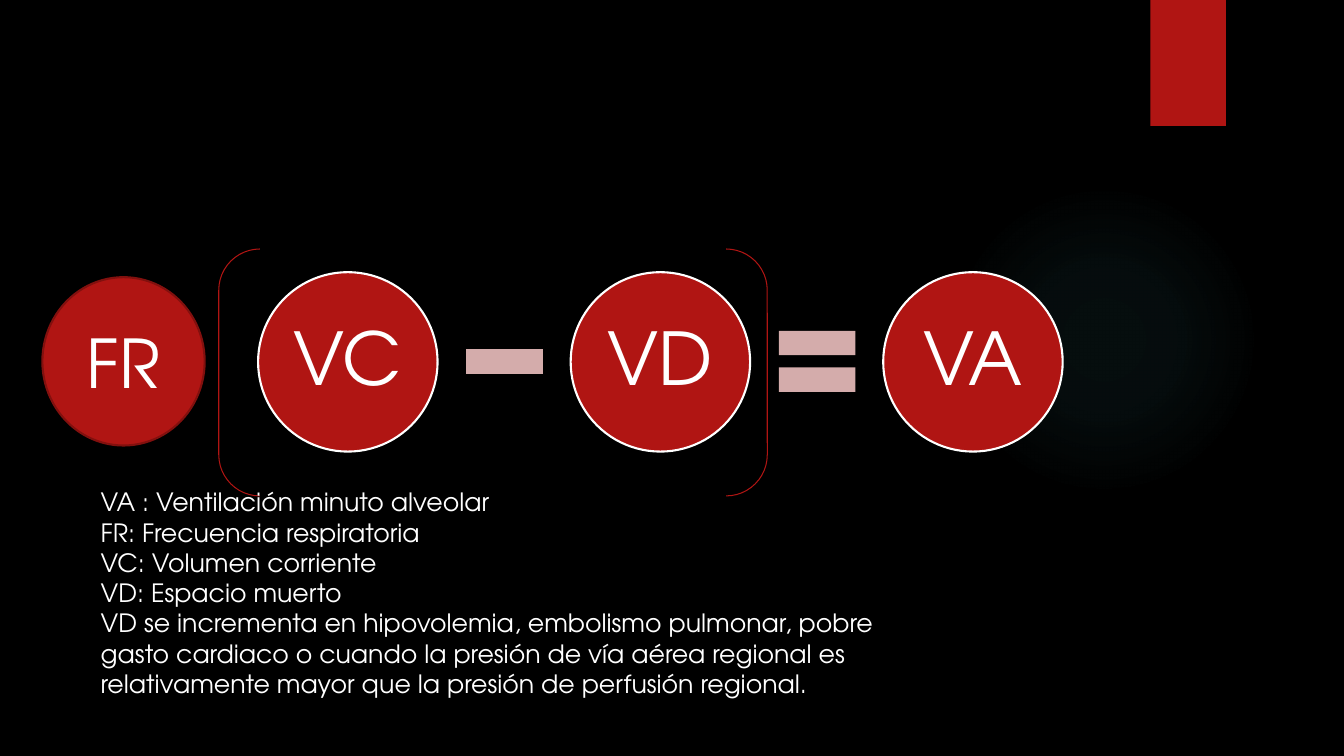
"""Build the alveolar ventilation equation slide."""
from dataclasses import dataclass
from typing import Optional

from lxml import etree
from pptx import Presentation
from pptx import util as u
from pptx.dml.color import RGBColor
from pptx.enum import shapes, text
from pptx.oxml import ns

Kind = shapes.MSO_SHAPE


@dataclass(frozen=True)
class Theme:
    font: str = "TeX Gyre Adventor"
    background: str = "000000"
    white: str = "FFFFFF"
    red: str = "B01513"
    dark_red: str = "82100E"
    pink: str = "D4ACAB"
    glow: str = "50B9C1"
    term_size: int = 52
    rate_size: int = 48
    body_size: int = 18
    outline: float = 1.5
    thin: float = 0.75


THEME = Theme()


@dataclass(frozen=True)
class Figure:
    kind: Kind
    left: float
    top: float
    width: float
    height: float
    fill: Optional[str] = None
    line: Optional[str] = None
    line_width: float = THEME.outline
    label: str = ""
    size: int = THEME.term_size
    spacing: float = 1.0
    inset: float = 0.1


def add_span(para, words: str, size: int) -> None:
    span = para.add_run()
    span.text = words
    span.font.name = THEME.font
    span.font.size = u.Pt(size)
    span.font.color.rgb = RGBColor.from_string(THEME.white)


def draw_label(shape, figure: Figure) -> None:
    frame = shape.text_frame
    frame.word_wrap = True
    frame.vertical_anchor = text.MSO_ANCHOR.MIDDLE
    frame.margin_left = frame.margin_right = u.Inches(figure.inset)
    frame.margin_top = frame.margin_bottom = u.Inches(min(figure.inset, 0.07))
    para = frame.paragraphs[0]
    para.alignment = text.PP_ALIGN.CENTER
    para.line_spacing = figure.spacing
    add_span(para, figure.label, figure.size)


def draw_figure(page, figure: Figure):
    box = (figure.left, figure.top, figure.width, figure.height)
    shape = page.shapes.add_shape(figure.kind, *map(u.Inches, box))
    shape.shadow.inherit = False
    if figure.fill:
        shape.fill.solid()
        shape.fill.fore_color.rgb = RGBColor.from_string(figure.fill)
    else:
        shape.fill.background()
    if figure.line:
        shape.line.color.rgb = RGBColor.from_string(figure.line)
        shape.line.width = u.Pt(figure.line_width)
    else:
        shape.line.fill.background()
    if figure.label:
        draw_label(shape, figure)
    return shape


def draw_glow(page) -> None:
    shape = draw_figure(page, Figure(Kind.OVAL, 9.41, 1.83, 3.08, 3.08))
    plain = shape._element.spPr.find(ns.qn("a:noFill"))
    gradient = etree.Element(ns.qn("a:gradFill"))
    stops = etree.SubElement(gradient, ns.qn("a:gsLst"))
    for position, alpha in ((0, 7), (36, 6), (69, 0)):
        stop = etree.SubElement(stops, ns.qn("a:gs"), pos=str(position * 1000))
        color = etree.SubElement(stop, ns.qn("a:srgbClr"), val=THEME.glow)
        etree.SubElement(color, ns.qn("a:alpha"), val=str(alpha * 1000))
    circle = etree.SubElement(gradient, ns.qn("a:path"), {"path": "circle"})
    etree.SubElement(circle, ns.qn("a:fillToRect"),
                     dict.fromkeys("ltrb", "50000"))
    plain.getparent().replace(plain, gradient)


def draw_equation(page) -> None:
    first_term, first_sign, step = 2.56, 4.49, 3.1
    for index, label in enumerate(("VC", "VD", "VA")):
        draw_figure(page, Figure(
            Kind.OVAL, first_term + index * step, 2.7, 1.78, 1.78,
            THEME.red, THEME.white, label=label, spacing=0.9, inset=0.07))
    for index, kind in enumerate((Kind.MATH_MINUS, Kind.MATH_EQUAL)):
        draw_figure(page, Figure(
            kind, first_sign + index * step, 3.07, 1.03, 1.03, THEME.pink))
    draw_figure(page, Figure(Kind.DOUBLE_BRACKET, 2.17, 2.47, 5.44, 2.45,
                             line=THEME.red, line_width=THEME.thin))
    draw_figure(page, Figure(
        Kind.FLOWCHART_CONNECTOR, 0.42, 2.75, 1.61, 1.67, THEME.red,
        THEME.dark_red, label="FR", size=THEME.rate_size))


def draw_legend(page) -> None:
    lines = (
        "VA : Ventilación minuto alveolar",
        "FR: Frecuencia respiratoria",
        "VC: Volumen corriente",
        "VD: Espacio muerto",
        "VD se incrementa en hipovolemia, embolismo pulmonar, pobre gasto "
        "cardiaco o cuando la presión de vía aérea regional es relativamente "
        "mayor que la presión de perfusión regional.",
    )
    box = page.shapes.add_textbox(*map(u.Inches, (0.9, 4.78, 7.98, 2.22)))
    frame = box.text_frame
    frame.word_wrap = True
    frame.auto_size = text.MSO_AUTO_SIZE.SHAPE_TO_FIT_TEXT
    for index, words in enumerate(lines):
        para = frame.add_paragraph() if index else frame.paragraphs[0]
        add_span(para, words, THEME.body_size)


def main() -> None:
    deck = Presentation()
    deck.slide_width, deck.slide_height = u.Inches(13.33), u.Inches(7.5)
    page = deck.slides.add_slide(deck.slide_layouts[6])
    page.background.fill.solid()
    page.background.fill.fore_color.rgb = RGBColor.from_string(THEME.background)
    draw_glow(page)
    draw_figure(page, Figure(Kind.RECTANGLE, 11.41, 0, 0.75, 1.25, THEME.red))
    draw_equation(page)
    draw_legend(page)
    deck.save("out.pptx")


if __name__ == "__main__":
    main()
